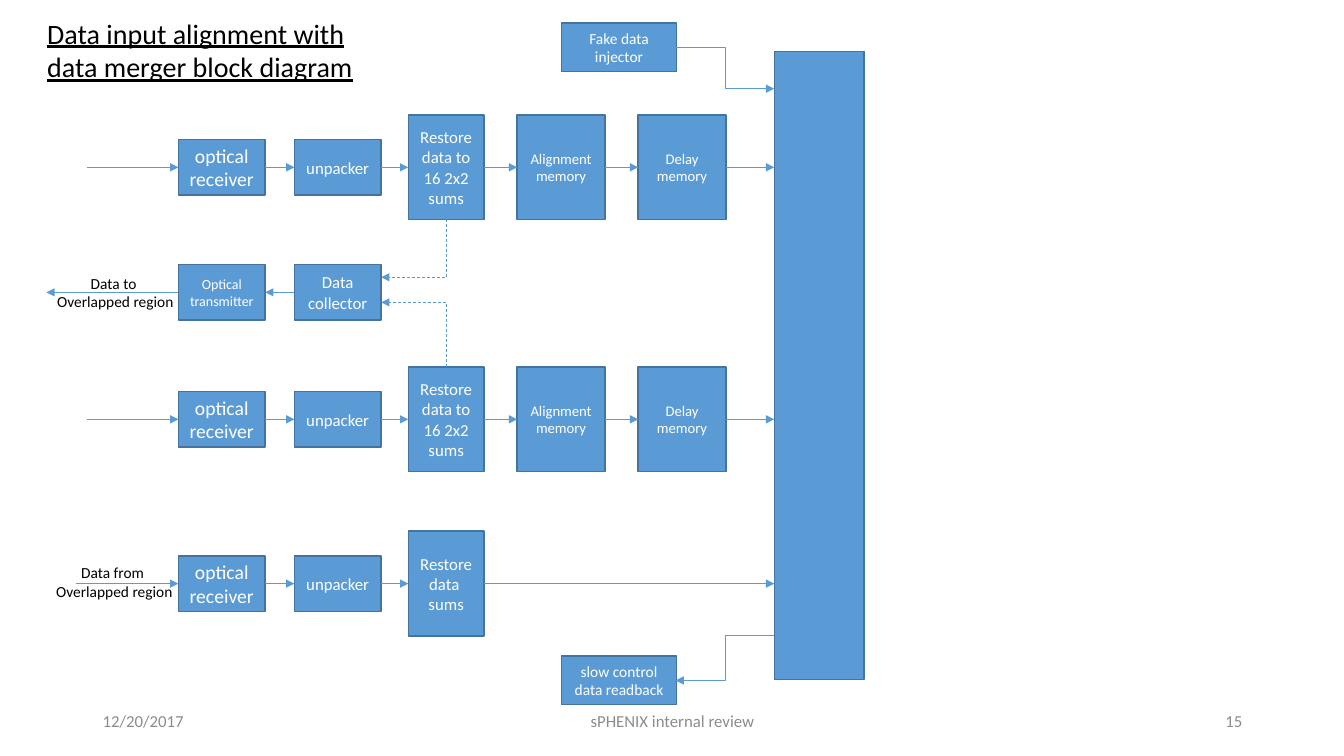
from dataclasses import dataclass

import pptx
import pptx.dml.color
import pptx.enum.dml
import pptx.enum.shapes
import pptx.enum.text
import pptx.oxml.ns
import pptx.util
from lxml import etree
from pptx.util import Inches

BLUE, OUTLINE, WHITE, BLACK, GRAY = "5B9BD5", "43739E", "FFFFFF", "000000", "8C8C8C"
TOP, LEFT, BOTTOM, RIGHT = range(4)
MERGER_LEFT = 7.68
ALIGN = pptx.enum.text.PP_ALIGN
ANCHOR = pptx.enum.text.MSO_ANCHOR
CONNECTOR = pptx.enum.shapes.MSO_CONNECTOR


@dataclass
class Stage:
    text: str
    left: float
    width: float
    height: float
    size: float


@dataclass
class Lane:
    middle: float
    stages: list[Stage]
    input_left: float


@dataclass
class Label:
    text: str
    left: float
    top: float
    width: float
    height: float
    size: float
    color: str = BLACK
    align: ALIGN = ALIGN.CENTER
    anchor: ANCHOR = ANCHOR.TOP
    wrap: bool = False
    underline: bool = False


RECEIVER = Stage("optical receiver", 1.77, 0.86, 0.55, 14)
UNPACKER = Stage("unpacker", 2.92, 0.86, 0.55, 12)
RESTORE_2X2 = Stage("Restore data to 16 2x2\nsums", 4.05, 0.75, 1.04, 12)
ALIGNMENT = Stage("Alignment memory", 5.13, 0.87, 1.04, 10.5)
DELAY = Stage("Delay memory", 6.33, 0.87, 1.04, 10.5)
RESTORE = Stage("Restore data \nsums", 4.05, 0.75, 1.04, 12)
TRANSMITTER = Stage("Optical transmitter", 1.77, 0.86, 0.55, 10)
COLLECTOR = Stage("Data collector", 2.92, 0.86, 0.55, 12)
INJECTOR = Stage("Fake data\ninjector", 5.57, 1.14, 0.48, 11)
READBACK = Stage("slow control data readback", 5.57, 1.14, 0.48, 11)

FULL_CHAIN = [RECEIVER, UNPACKER, RESTORE_2X2, ALIGNMENT, DELAY]
LANES = [
    Lane(1.66, FULL_CHAIN, 0.86),
    Lane(4.16, FULL_CHAIN, 0.86),
    Lane(5.79, [RECEIVER, UNPACKER, RESTORE], 0.75),
]
FOOTER = dict(top=6.95, height=0.4, size=12, color=GRAY, anchor=ANCHOR.MIDDLE, wrap=True)
LABELS = [
    Label("Data from \nOverlapped region", 0.45, 5.54, 1.37, 0.47, 11),
    Label("Data to \nOverlapped region", 0.46, 2.67, 1.37, 0.47, 11),
    Label("Data input alignment with\ndata merger block diagram", 0.37, 0.11, 3.26, 0.77, 20,
          align=ALIGN.LEFT, underline=True),
    Label("12/20/2017", left=0.92, width=3, align=ALIGN.LEFT, **FOOTER),
    Label("sPHENIX internal review", left=4.42, width=4.5, **FOOTER),
    Label("15", left=9.42, width=3, align=ALIGN.RIGHT, **FOOTER),
]

deck = pptx.Presentation()
deck.slide_width, deck.slide_height = Inches(13.33), Inches(7.5)
slide = deck.slides.add_slide(deck.slide_layouts[6])


def rgb(color: str) -> pptx.dml.color.RGBColor:
    return pptx.dml.color.RGBColor.from_string(color)


def write(shape, text: str, *, size: float, color: str = WHITE, align=ALIGN.CENTER,
          anchor=ANCHOR.MIDDLE, wrap: bool = True, underline: bool = False) -> None:
    frame = shape.text_frame
    frame.word_wrap = wrap
    frame.vertical_anchor = anchor
    frame.text = text
    for paragraph in frame.paragraphs:
        paragraph.alignment = align
        for run in paragraph.runs:
            run.font.name = "Calibri"
            run.font.size = pptx.util.Pt(size)
            run.font.color.rgb = rgb(color)
            if underline:
                run.font.underline = True


def draw_block(left: float, top: float, width: float, height: float):
    block = slide.shapes.add_shape(pptx.enum.shapes.MSO_SHAPE.RECTANGLE,
                                   Inches(left), Inches(top), Inches(width), Inches(height))
    block.shadow.inherit = False
    block.fill.solid()
    block.fill.fore_color.rgb = rgb(BLUE)
    block.line.color.rgb = rgb(OUTLINE)
    block.line.width = pptx.util.Pt(1)
    return block


def draw_stage(stage: Stage, middle: float):
    block = draw_block(stage.left, middle - stage.height / 2, stage.width, stage.height)
    write(block, stage.text, size=stage.size)
    return block


def draw_arrow(x1: float, y1: float, x2: float, y2: float, kind=CONNECTOR.STRAIGHT):
    arrow = slide.shapes.add_connector(kind, Inches(x1), Inches(y1), Inches(x2), Inches(y2))
    arrow.line.color.rgb = rgb(BLUE)
    arrow.line.width = pptx.util.Pt(0.5)
    qn = pptx.oxml.ns.qn
    etree.SubElement(arrow.line._get_or_add_ln(), qn("a:tailEnd"), type="triangle")
    etree.SubElement(arrow._element.spPr, qn("a:effectLst"))
    return arrow


def link(source, target) -> None:
    arrow = draw_arrow(0, 0, 1, 0)
    forward = source.left < target.left
    arrow.begin_connect(source, RIGHT if forward else LEFT)
    arrow.end_connect(target, LEFT if forward else RIGHT)


def draw_corner(x1: float, y1: float, x2: float, y2: float) -> None:
    run, rise = abs(x2 - x1), abs(y2 - y1)
    left, top = (x1 + x2 - rise) / 2, (y1 + y2 - run) / 2
    corner = draw_arrow(left, top, left + rise, top + run, CONNECTOR.ELBOW)
    corner.line.dash_style = pptx.enum.dml.MSO_LINE.DASH
    properties = corner._element.spPr
    properties.find(pptx.oxml.ns.qn("a:prstGeom")).set("prst", "bentConnector2")
    frame = properties.find(pptx.oxml.ns.qn("a:xfrm"))
    downward = y2 > y1
    frame.set("rot", str((90 if downward else 270) * 60000))
    if not downward:
        frame.set("flipV", "1")


def draw_lane(lane: Lane) -> None:
    blocks = [draw_stage(stage, lane.middle) for stage in lane.stages]
    draw_arrow(lane.input_left, lane.middle, RECEIVER.left, lane.middle).end_connect(blocks[0], LEFT)
    for source, target in zip(blocks, blocks[1:]):
        link(source, target)
    last = lane.stages[-1]
    output = draw_arrow(last.left + last.width, lane.middle, MERGER_LEFT, lane.middle)
    output.begin_connect(blocks[-1], RIGHT)


def draw_label(label: Label) -> None:
    box = slide.shapes.add_textbox(Inches(label.left), Inches(label.top),
                                   Inches(label.width), Inches(label.height))
    write(box, label.text, size=label.size, color=label.color, align=label.align,
          anchor=label.anchor, wrap=label.wrap, underline=label.underline)


def main() -> None:
    draw_block(MERGER_LEFT, 0.51, 0.89, 6.23)
    for lane in LANES:
        draw_lane(lane)

    transmitter, collector = draw_stage(TRANSMITTER, 2.9), draw_stage(COLLECTOR, 2.9)
    link(collector, transmitter)
    draw_arrow(1.77, 2.9, 0.46, 2.9).begin_connect(transmitter, LEFT)
    draw_corner(4.43, 2.17, 3.78, 2.75)
    draw_corner(4.43, 3.64, 3.78, 3)

    draw_stage(INJECTOR, 0.47)
    draw_arrow(6.7, 0.47, MERGER_LEFT, 0.88, CONNECTOR.ELBOW)
    draw_stage(READBACK, 6.75)
    draw_arrow(MERGER_LEFT, 6.3, 6.7, 6.75, CONNECTOR.ELBOW)

    for label in LABELS:
        draw_label(label)
    deck.save("out.pptx")


if __name__ == "__main__":
    main()
